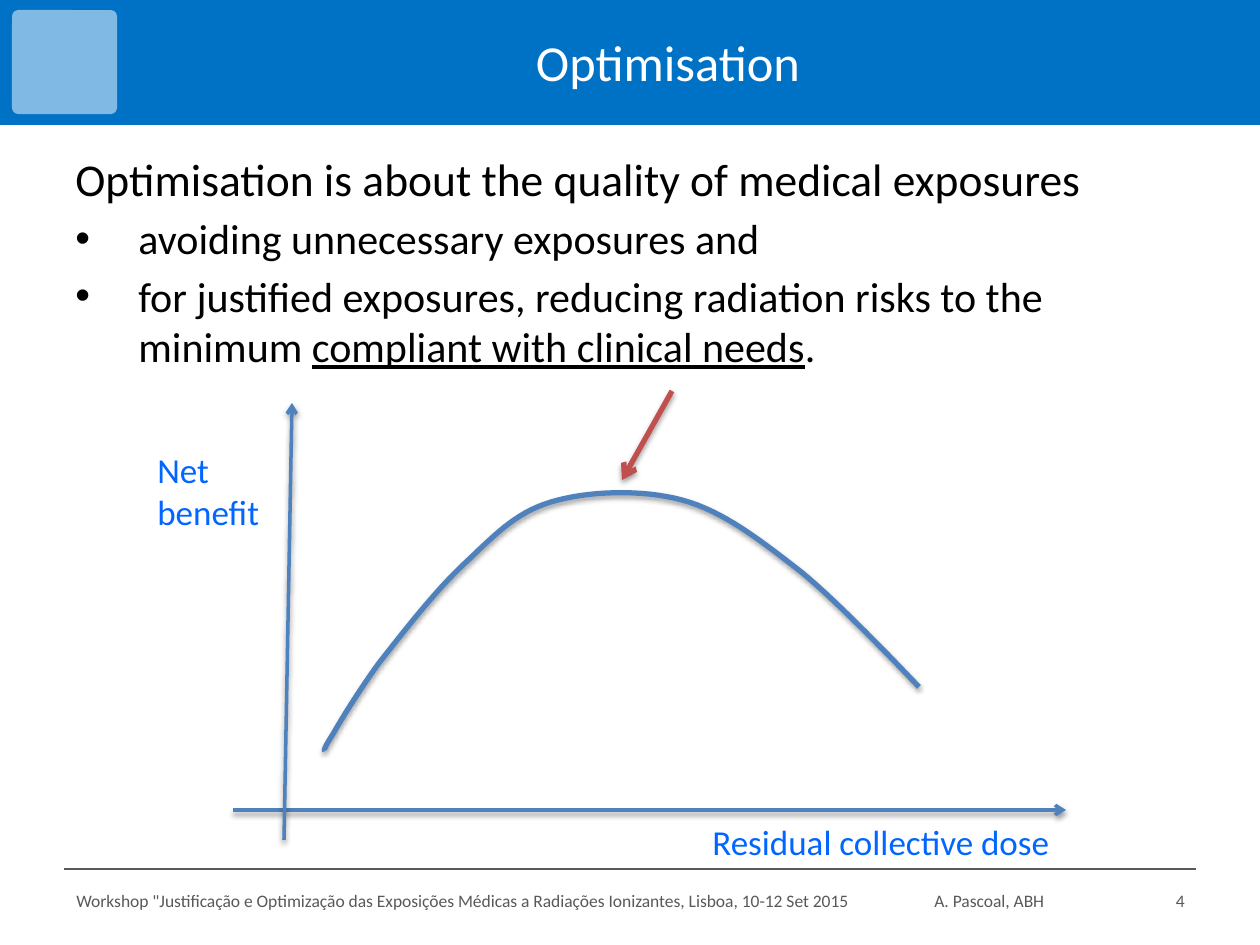
from lxml import etree
from pptx import Presentation
from pptx.dml.color import RGBColor
from pptx.enum.shapes import MSO_CONNECTOR, MSO_SHAPE
from pptx.enum.text import MSO_ANCHOR, PP_ALIGN
from pptx.oxml import parse_xml
from pptx.oxml.ns import nsdecls, qn
from pptx.util import Pt

SCALE = 914400 / 126  # EMU in one px
BLUE = RGBColor(0x00, 0x72, 0xC6)
PALE_BLUE = RGBColor(0x80, 0xB9, 0xE3)
LABEL_BLUE = RGBColor(0x00, 0x66, 0xFF)
CURVE_BLUE = RGBColor(0x4F, 0x81, 0xBD)
RED = RGBColor(0xC0, 0x50, 0x4D)
GREY = RGBColor(0x59, 0x59, 0x59)
BLACK = RGBColor(0x00, 0x00, 0x00)
WHITE = RGBColor(0xFF, 0xFF, 0xFF)

# Content: a paragraph is a list of (text, underlined) spans
TITLE = [[("Optimisation", False)]]
LEAD = [("Optimisation is about the quality of medical exposures", False)]
BULLETS = [
    [("avoiding unnecessary exposures and", False)],
    [("for justified exposures, reducing radiation risks to the minimum ", False),
     ("compliant with clinical needs", True), (".", False)],
]
LABELS = [  # lines, place
    (["Net", "benefit"], (145, 442, 128, 97)),
    (["Residual collective dose"], (700, 814, 367, 55)),
]
FOOTERS = [  # text, place, alignment
    ('Workshop "Justificação e Optimização das Exposições Médicas a Radiações '
     'Ionizantes, Lisboa, 10-12 Set 2015', (64, 876, 840, 50), PP_ALIGN.LEFT),
    ("A. Pascoal, ABH", (922, 876, 200, 50), PP_ALIGN.LEFT),
    ("4", (1145, 876, 52, 50), PP_ALIGN.RIGHT),
]
ARROWS = [  # start, end, colour, width in points
    ((233, 810), (1066, 810), CURVE_BLUE, 2),
    ((284, 840), (292, 403), CURVE_BLUE, 2),
    ((672, 391), (622, 480), RED, 3),
]
CURVE_START = (325, 751)
CURVE = [  # two control points and an end for each Bézier piece
    ((324, 750), (324, 748), (333, 734)),
    ((341, 720), (358, 692), (379, 663)),
    ((401, 635), (435, 591), (464, 564)),
    ((493, 537), (514, 513), (551, 502)),
    ((587, 491), (641, 489), (682, 500)),
    ((723, 511), (760, 540), (800, 571)),
    ((839, 602), (919, 687), (919, 687)),
]
CURVE_STEPS = 16


def emu(*lengths):
    return [round(length * SCALE) for length in lengths]


def write(frame, paragraphs, size, color, align=PP_ALIGN.LEFT,
          anchor=MSO_ANCHOR.TOP, before=0, bullet=False, start_new=True):
    """Write paragraphs of (text, underlined) spans into a text frame."""
    frame.word_wrap = True
    frame.vertical_anchor = anchor
    for index, spans in enumerate(paragraphs):
        first = start_new and index == 0
        para = frame.paragraphs[0] if first else frame.add_paragraph()
        para.alignment = align
        para.space_before = Pt(before)
        if bullet:
            props = para._p.get_or_add_pPr()
            props.set("marL", "457200")
            props.set("indent", "-457200")
            etree.SubElement(props, qn("a:buFont")).set("typeface", "Arial")
            etree.SubElement(props, qn("a:buChar")).set("char", "•")
        for text, underlined in spans:
            span = para.add_run()
            span.text = text
            span.font.name = "Calibri"
            span.font.size = Pt(size)
            span.font.color.rgb = color
            if underlined:
                span.font.underline = True


def add_text(place, paragraphs, **formatting):
    box = slide.shapes.add_textbox(*emu(*place))
    write(box.text_frame, paragraphs, **formatting)
    return box


def add_block(kind, place, color):
    block = slide.shapes.add_shape(kind, *emu(*place))
    block.shadow.inherit = False
    block.fill.solid()
    block.fill.fore_color.rgb = color
    block.line.fill.background()
    return block


def add_shadow(shape):
    props = shape.element.spPr
    for old in props.findall(qn("a:effectLst")):
        props.remove(old)
    props.append(parse_xml(
        f'<a:effectLst {nsdecls("a")}><a:outerShdw blurRad="40000" dist="20000" '
        'dir="5400000" rotWithShape="0"><a:srgbClr val="000000">'
        '<a:alpha val="38000"/></a:srgbClr></a:outerShdw></a:effectLst>'))


def add_line(start, end, color, width):
    line = slide.shapes.add_connector(MSO_CONNECTOR.STRAIGHT, *emu(*start, *end))
    line.line.color.rgb = color
    line.line.width = Pt(width)
    etree.SubElement(line.element.spPr, qn("a:effectLst"))
    return line


def bezier(points, t):
    weights = ((1 - t) ** 3, 3 * t * (1 - t) ** 2, 3 * t ** 2 * (1 - t), t ** 3)
    return tuple(sum(w * p[axis] for w, p in zip(weights, points))
                 for axis in (0, 1))


deck = Presentation()
deck.slide_width, deck.slide_height = emu(1260, 945)
slide = deck.slides.add_slide(deck.slide_layouts[5])

# Header band with a plain emblem block
add_block(MSO_SHAPE.RECTANGLE, (0, 0, 1260, 125), BLUE)
emblem = add_block(MSO_SHAPE.ROUNDED_RECTANGLE, (12, 10, 105, 104), PALE_BLUE)
emblem.adjustments[0] = 0.06

# Title, brought in front of the band
title = slide.shapes.title
title.left, title.top, title.width, title.height = emu(142, 23, 1052, 77)
write(title.text_frame, TITLE, size=28.8, color=WHITE, align=PP_ALIGN.CENTER,
      anchor=MSO_ANCHOR.MIDDLE)
title.element.getparent().append(title.element)

# Body
body = add_text((63, 145, 1134, 240), [LEAD], size=26, color=BLACK, before=4)
write(body.text_frame, BULLETS, size=24, color=BLACK, before=4, bullet=True,
      start_new=False)

# Footer
add_line((64, 869), (1196, 869), GREY, 0.75)
for text, place, align in FOOTERS:
    add_text(place, [[(text, False)]], size=10, color=GREY, align=align,
             anchor=MSO_ANCHOR.MIDDLE)

# Axes and pointer
for start, end, color, width in ARROWS:
    arrow = add_line(start, end, color, width)
    tail = etree.SubElement(arrow.line._get_or_add_ln(), qn("a:tailEnd"))
    tail.set("type", "arrow")
    add_shadow(arrow)

# Benefit curve
points = []
corner = CURVE_START
for piece in CURVE:
    points += [bezier((corner, *piece), step / CURVE_STEPS)
               for step in range(1, CURVE_STEPS + 1)]
    corner = piece[-1]
builder = slide.shapes.build_freeform(*emu(*CURVE_START), scale=1.0)
builder.add_line_segments([emu(*point) for point in points], close=False)
curve = builder.convert_to_shape()
curve.fill.background()
curve.line.color.rgb = CURVE_BLUE
curve.line.width = Pt(3)
add_shadow(curve)

# Axis labels
for lines, place in LABELS:
    add_text(place, [[(line, False)] for line in lines], size=20, color=LABEL_BLUE)

deck.save("out.pptx")
